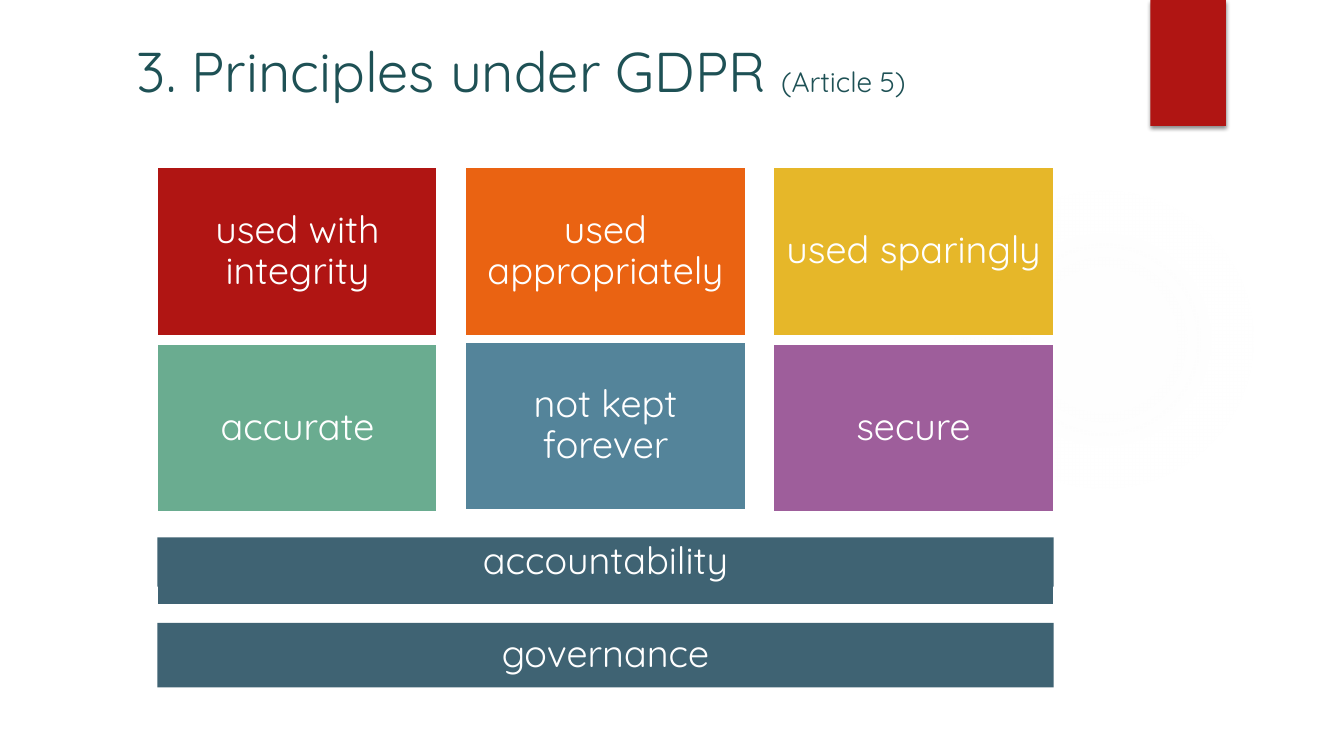
from dataclasses import dataclass
from typing import Optional

import lxml.etree
import pptx
import pptx.dml.color
import pptx.enum.shapes
import pptx.enum.text
import pptx.oxml
import pptx.oxml.ns
import pptx.util

Inches = pptx.util.Inches
RGBColor = pptx.dml.color.RGBColor
Anchor = pptx.enum.text.MSO_ANCHOR
Align = pptx.enum.text.PP_ALIGN
Preset = pptx.enum.shapes.MSO_SHAPE

FONT = "Quicksand"
WHITE = RGBColor(0xFF, 0xFF, 0xFF)
TEAL = RGBColor(0x1E, 0x51, 0x55)
RED = RGBColor(0xB0, 0x15, 0x13)
ORANGE = RGBColor(0xEA, 0x63, 0x12)
YELLOW = RGBColor(0xE6, 0xB7, 0x29)
GREEN = RGBColor(0x6A, 0xAC, 0x90)
BLUE = RGBColor(0x54, 0x84, 0x9A)
PURPLE = RGBColor(0x9E, 0x5E, 0x9B)
SLATE = RGBColor(0x3F, 0x63, 0x73)

LEFT, TOTAL_WIDTH = 1.56, 8.89
TILE_WIDTH, TILE_HEIGHT = 2.78, 1.67
COLUMNS = 3
COLUMN_PITCH = (TOTAL_WIDTH - TILE_WIDTH) / (COLUMNS - 1)
FIRST_ROW, ROW_PITCH = 1.66, 1.75
DRAWING_NS = pptx.oxml.ns.nsdecls("a")


@dataclass(frozen=True)
class Principle:
    label: str
    color: RGBColor
    lift: float = 0


@dataclass(frozen=True)
class Bar:
    label: str
    top: float
    height: float
    outline: Optional[RGBColor] = None


PRINCIPLES = (
    Principle("used with integrity", RED),
    Principle("used appropriately", ORANGE),
    Principle("used sparingly", YELLOW),
    Principle("accurate", GREEN),
    Principle("not kept forever", BLUE, lift=0.02),
    Principle("secure", PURPLE),
)
BARS = (
    Bar("", 5.51, 0.49, outline=WHITE),
    Bar("accountability", 5.33, 0.49),
    Bar("governance", 6.18, 0.64),
)


def write_text(frame, text: str, *, size: float = 27, color: RGBColor = WHITE,
               align=Align.CENTER, anchor=Anchor.MIDDLE,
               inset: float = 0.11, spacing: float = 0.9) -> None:
    frame.word_wrap = True
    frame.vertical_anchor = anchor
    frame.margin_left = frame.margin_right = Inches(inset)
    frame.margin_top = frame.margin_bottom = Inches(min(inset, 0.11))
    paragraph = frame.paragraphs[0]
    paragraph.alignment = align
    paragraph.line_spacing = spacing
    add_run(paragraph, text, size, color)


def add_run(paragraph, text: str, size: float, color: RGBColor) -> None:
    run = paragraph.add_run()
    run.text = text
    run.font.name = FONT
    run.font.size = pptx.util.Pt(size)
    run.font.color.rgb = color


def add_block(slide, left: float, top: float, width: float, height: float,
              color: RGBColor, *, outline: Optional[RGBColor] = None, label: str = ""):
    block = slide.shapes.add_shape(
        Preset.RECTANGLE, Inches(left), Inches(top), Inches(width), Inches(height))
    block.shadow.inherit = False
    block.fill.solid()
    block.fill.fore_color.rgb = color
    if outline is None:
        block.line.fill.background()
    else:
        block.line.color.rgb = outline
        block.line.width = pptx.util.Pt(1.5)
    if label:
        write_text(block.text_frame, label)
    return block


def add_glow(slide) -> None:
    glow = slide.shapes.add_shape(
        Preset.OVAL, Inches(9.41), Inches(1.83), Inches(3.08), Inches(3.08))
    glow.shadow.inherit = False
    glow.line.fill.background()
    glow.fill.background()
    stops = "".join(
        f'<a:gs pos="{position * 1000}"><a:srgbClr val="F3F3F3">'
        f'<a:alpha val="{alpha * 1000}"/></a:srgbClr></a:gs>'
        for position, alpha in ((0, 7), (36, 6), (69, 0)))
    gradient = pptx.oxml.parse_xml(
        f'<a:gradFill {DRAWING_NS} rotWithShape="1"><a:gsLst>{stops}</a:gsLst>'
        '<a:path path="circle"><a:fillToRect l="50000" t="50000" r="50000" b="50000"/>'
        '</a:path></a:gradFill>')
    properties = glow.element.spPr
    properties.replace(properties.find(pptx.oxml.ns.qn("a:noFill")), gradient)


def add_ribbon(slide) -> None:
    ribbon = add_block(slide, 11.41, 0, 0.75, 1.25, RED)
    effects = ribbon.element.spPr.find(pptx.oxml.ns.qn("a:effectLst"))
    effects.append(pptx.oxml.parse_xml(
        f'<a:outerShdw {DRAWING_NS} blurRad="{pptx.util.Pt(3)}" '
        f'dist="{pptx.util.Pt(2)}" dir="5400000" rotWithShape="0">'
        '<a:srgbClr val="000000"><a:alpha val="45000"/></a:srgbClr></a:outerShdw>'))


def add_heading(slide) -> None:
    heading = slide.shapes.add_textbox(
        Inches(1.26), Inches(0.31), Inches(9.65), Inches(0.92))
    write_text(heading.text_frame, "3. Principles under GDPR ", size=40, color=TEAL,
               align=Align.LEFT, anchor=Anchor.TOP, inset=0.1, spacing=1.0)
    heading.text_frame.margin_top = heading.text_frame.margin_bottom = Inches(0.05)
    add_run(heading.text_frame.paragraphs[0], "(Article 5)", 20, TEAL)


def main() -> None:
    presentation = pptx.Presentation()
    presentation.slide_width = Inches(13.33)
    presentation.slide_height = Inches(7.5)
    slide = presentation.slides.add_slide(presentation.slide_layouts[6])
    add_glow(slide)
    add_ribbon(slide)
    add_heading(slide)
    for index, principle in enumerate(PRINCIPLES):
        row, column = divmod(index, COLUMNS)
        add_block(slide, LEFT + column * COLUMN_PITCH,
                  FIRST_ROW + row * ROW_PITCH - principle.lift,
                  TILE_WIDTH, TILE_HEIGHT, principle.color,
                  outline=WHITE, label=principle.label)
    for bar in BARS:
        add_block(slide, LEFT, bar.top, TOTAL_WIDTH, bar.height, SLATE,
                  outline=bar.outline, label=bar.label)
    presentation.save("out.pptx")


if __name__ == "__main__":
    main()
